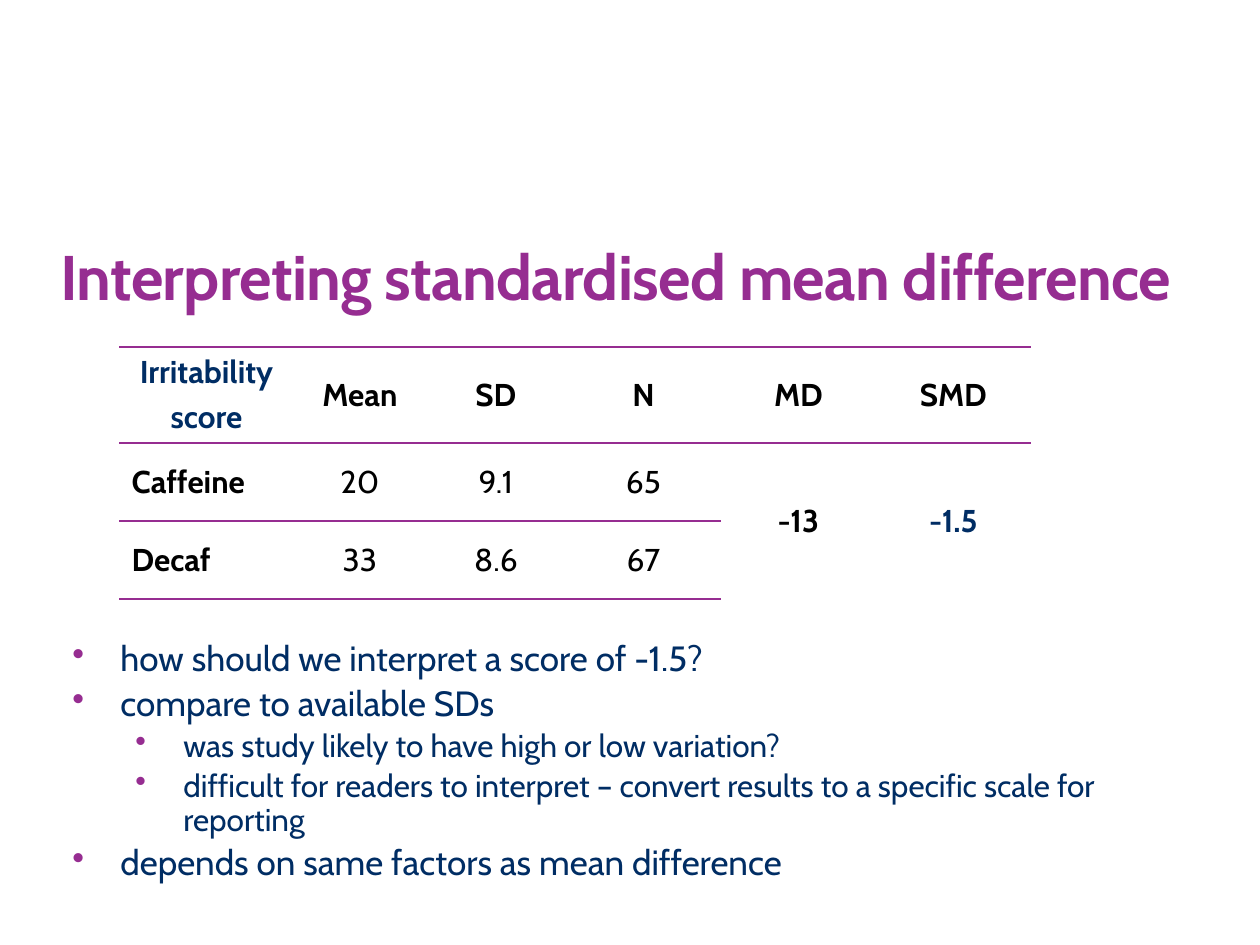
import pptx
import pptx.util
import pptx.dml.color
import pptx.enum.text
from lxml import etree
from pptx.oxml.ns import qn

PX = 914400 / 126
FONT = "Cabin"
PURPLE = pptx.dml.color.RGBColor(0x96, 0x2D, 0x91)
NAVY = pptx.dml.color.RGBColor(0x00, 0x2D, 0x64)
BLACK = pptx.dml.color.RGBColor(0x00, 0x00, 0x00)
CENTER = pptx.enum.text.PP_ALIGN.CENTER
LEFT = pptx.enum.text.PP_ALIGN.LEFT
MIDDLE = pptx.enum.text.MSO_ANCHOR.MIDDLE
BOTTOM = pptx.enum.text.MSO_ANCHOR.BOTTOM
NO_GRID = "{2D5ABB26-0587-4C30-8999-92F81FD0307C}"

COLUMNS = [175, 132, 140, 155, 155, 155]
ROWS = [96, 78, 78]
SCORES = [
    ["Irritability\nscore", "Mean", "SD", "N", "MD", "SMD"],
    ["Caffeine", "20", "9.1", "65", "-13", "-1.5"],
    ["Decaf", "33", "8.6", "67", "", ""],
]
BULLETS = [
    (0, "how should we interpret a score of -1.5?"),
    (0, "compare to available SDs"),
    (1, "was study likely to have high or low variation?"),
    (1, "difficult for readers to interpret – convert results to a specific scale for reporting"),
    (0, "depends on same factors as mean difference"),
]


def px(n):
    """Turn px into EMU."""
    return pptx.util.Emu(round(n * PX))


def apply(obj, values):
    """Set every attribute in a dict of format values."""
    for name, value in values.items():
        setattr(obj, name, value)


def style(font, size, color, bold=False):
    """Format a font."""
    apply(font, {"name": FONT, "size": pptx.util.Pt(size), "bold": bold})
    font.color.rgb = color


def add_title(s, text, x, y, w, h):
    """Place and format the title placeholder."""
    sp = s.shapes.title
    apply(sp, {"left": px(x), "top": px(y), "width": px(w), "height": px(h)})
    tf = sp.text_frame
    apply(tf, {"margin_left": 0, "margin_right": 0, "margin_top": 0, "margin_bottom": 0,
               "vertical_anchor": BOTTOM, "word_wrap": True,
               "auto_size": pptx.enum.text.MSO_AUTO_SIZE.NONE})
    p = tf.paragraphs[0]
    p.alignment = LEFT
    r = p.add_run()
    r.text = text
    style(r.font, 36, PURPLE, True)
    r.font._element.set("spc", "-40")


def add_border(cell, side):
    """Draw a one-point purple line on one side of a cell."""
    ln = etree.Element(qn(f"a:{side}"), w="12700")
    fill = etree.SubElement(ln, qn("a:solidFill"))
    etree.SubElement(fill, qn("a:srgbClr"), val=str(PURPLE))
    cell._tc.get_or_add_tcPr().insert(0, ln)


def add_scores(s, x, y):
    """Add the table of irritability scores."""
    frame = s.shapes.add_table(len(ROWS), len(COLUMNS), px(x), px(y),
                               px(sum(COLUMNS)), px(sum(ROWS)))
    table = frame.table
    table._tbl.tblPr.find(qn("a:tableStyleId")).text = NO_GRID
    apply(table, {"first_row": False, "horz_banding": False})
    for column, width in zip(table.columns, COLUMNS):
        column.width = px(width)
    for row, height in zip(table.rows, ROWS):
        row.height = px(height)
    for i, texts in enumerate(SCORES):
        for j, text in enumerate(texts):
            cell = table.cell(i, j)
            cell.fill.background()
            cell.vertical_anchor = MIDDLE
            add_border(cell, "lnB" if i == 2 else "lnT")
            if not text:
                cell.merge(table.cell(i - 1, j))
                continue
            cell.text = text
            for k, p in enumerate(cell.text_frame.paragraphs):
                p.alignment = LEFT if i and j == 0 else CENTER
                if k:
                    p.space_before = pptx.util.Pt(3.6)
                color = NAVY if (i, j) in ((0, 0), (1, 5)) else BLACK
                style(p.runs[0].font, 18, color, i == 0 or j in (0, 4, 5))


def add_bullets(s, x, y, w, h):
    """Add the two-level bullet list."""
    tf = s.shapes.add_textbox(px(x), px(y), px(w), px(h)).text_frame
    tf.word_wrap = True
    for i, (level, text) in enumerate(BULLETS):
        p = tf.paragraphs[0] if i == 0 else tf.add_paragraph()
        size = 20 - 2 * level
        apply(p, {"level": level, "line_spacing": 0.9})
        if i:
            p.space_before = pptx.util.Pt(size * 0.2)
        pPr = p._p.get_or_add_pPr()
        pPr.set("marL", str(px(48 + 63 * level)))
        pPr.set("indent", str(px(-48)))
        color = etree.SubElement(pPr, qn("a:buClr"))
        etree.SubElement(color, qn("a:srgbClr"), val=str(PURPLE))
        etree.SubElement(pPr, qn("a:buChar"), char="•")
        r = p.add_run()
        r.text = text
        style(r.font, size, NAVY)


def main():
    """Build and save the slide."""
    prs = pptx.Presentation()
    apply(prs, {"slide_width": px(1260), "slide_height": px(945)})
    s = prs.slides.add_slide(prs.slide_layouts[5])
    add_title(s, "Interpreting standardised mean difference", 60, 226, 1149, 87)
    add_scores(s, 119, 347)
    add_bullets(s, 60, 635, 1149, 338)
    prs.save("out.pptx")


if __name__ == "__main__":
    main()
